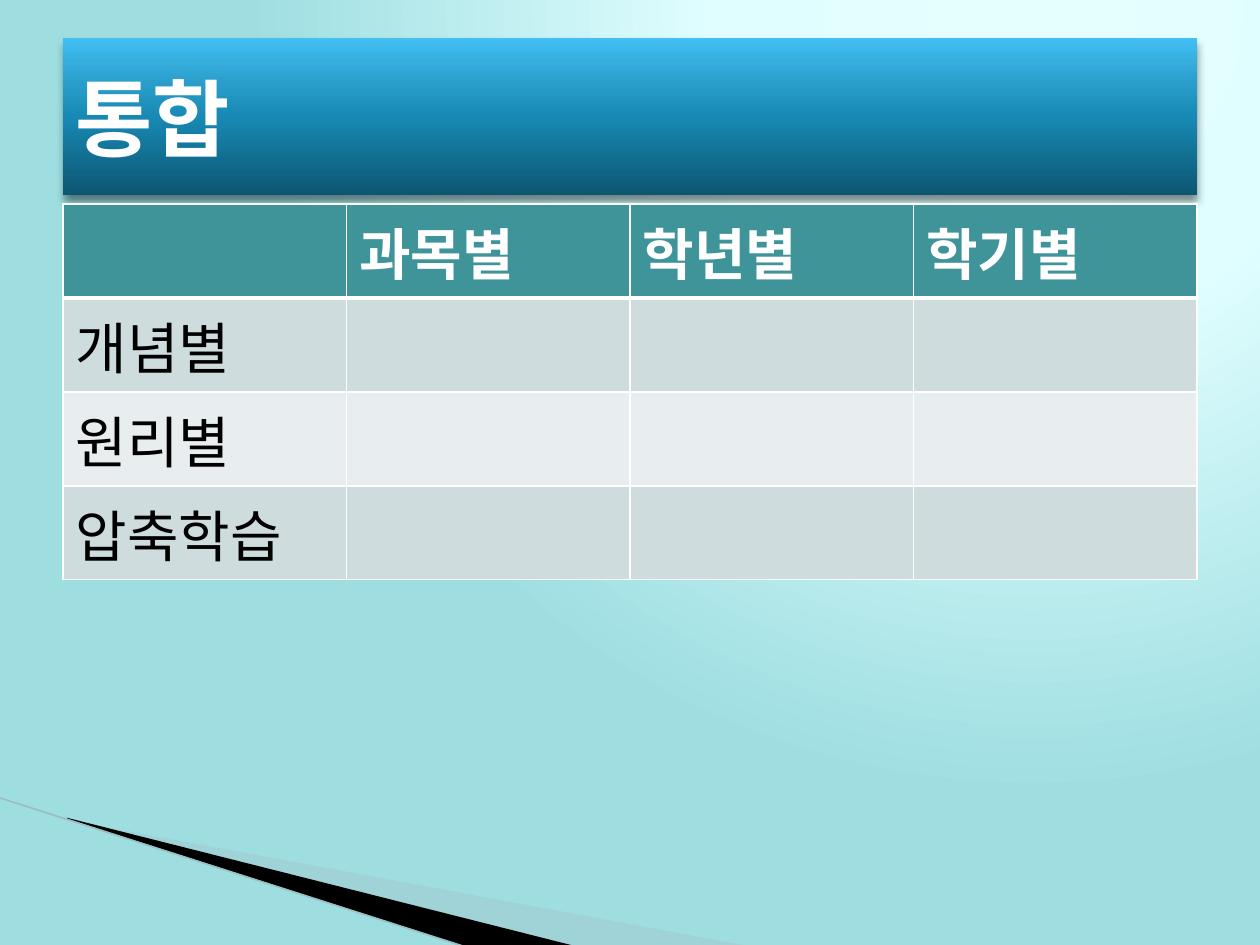
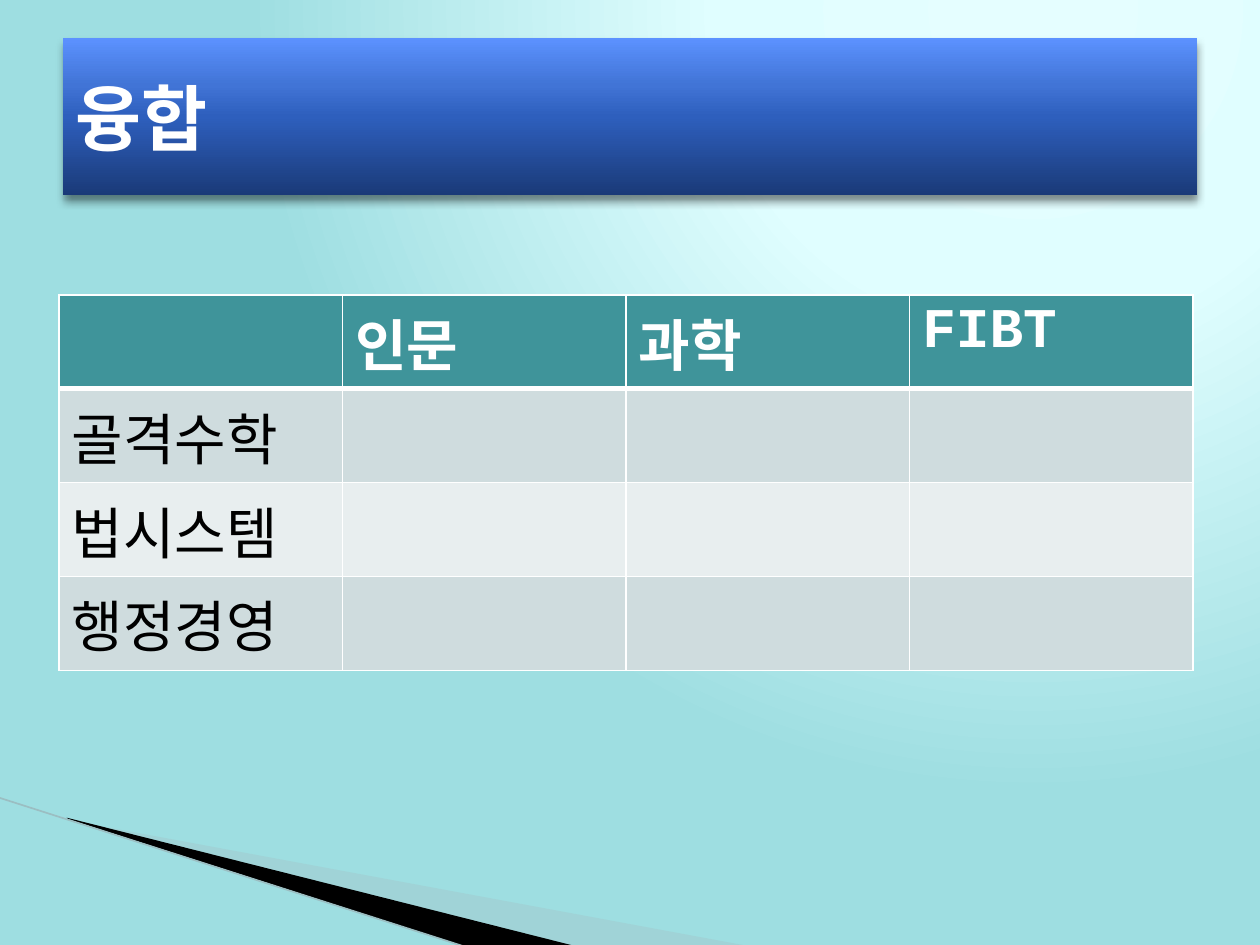
from dataclasses import dataclass

from lxml import etree
from pptx import Presentation
from pptx.dml.color import RGBColor
from pptx.enum import lang, shapes, text
from pptx.oxml import ns
from pptx.util import Pt

FONT = "Courier New"
COLORS = {
    "white": "FFFFFF",
    "black": "000000",
    "header": "3F949A",
    "band_dark": "CFDCDE",
    "band_light": "E8EEEF",
    "wedge": "A4C4C8",
    "thin_line": "9BBEC2",
}
BACKGROUND_STOPS = {0: "E5FEFF", 40: "E0FEFF", 100: "9EDEE1"}
CYAN_STOPS = {0: "0C5672", 50: "1889B4", 70: "299DCA", 100: "42BFF3"}
BLUE_STOPS = {0: "1A3A78", 50: "2E5FBD", 70: "4174D6", 100: "5C92FF"}
UPWARD = '<a:lin ang="16200000" scaled="0"/>'
TOP_RIGHT_GLOW = '<a:path path="circle"><a:fillToRect l="65000" t="0" r="0" b="98000"/></a:path>'

COLUMN_WIDTH = 162
ROW_HEIGHT = 53.5


@dataclass
class GridPage:
    title: str
    title_size: float
    title_stops: dict[int, str]
    table_left: float
    table_top: float
    rows: list[list[str]]


PAGES = [
    GridPage("통합", 48, CYAN_STOPS, 36, 116.64,
             [["", "과목별", "학년별", "학기별"], ["개념별"], ["원리별"], ["압축학습"]]),
    GridPage("융합", 41, BLUE_STOPS, 33.84, 168.48,
             [["", "인문", "과학", "FIBT"], ["골격수학"], ["법시스템"], ["행정경영"]]),
]


def rgb(name: str) -> RGBColor:
    return RGBColor.from_string(COLORS[name])


def element(markup: str):
    """Parse one DrawingML element, declaring the a: prefix on its tag."""
    tag, rest = markup.split(" ", 1)
    return etree.fromstring(f"{tag} {ns.nsdecls('a')} {rest}")


def set_gradient(fill, holder, stops: dict[int, str], direction: str) -> None:
    """Replace the fill inside holder by a gradient with any number of stops."""
    fill.solid()
    stop_list = "".join(
        f'<a:gs pos="{position * 1000}"><a:srgbClr val="{color}"/></a:gs>'
        for position, color in stops.items())
    gradient = element(
        f'<a:gradFill rotWithShape="1"><a:gsLst>{stop_list}</a:gsLst>{direction}</a:gradFill>')
    solid = holder.find(ns.qn("a:solidFill"))
    holder.replace(solid, gradient)


def write(frame, words: str, *, size: float, color: str, bold: bool) -> None:
    para = frame.paragraphs[0]
    para.alignment = text.PP_ALIGN.LEFT
    span = para.add_run()
    span.text = words
    span.font.name = FONT
    span.font.size = Pt(size)
    span.font.bold = bold
    span.font.color.rgb = rgb(color)
    span.font.language_id = lang.MSO_LANGUAGE_ID.KOREAN


def add_wedge(page, points: list[tuple[float, float]], color: str):
    corners = [(Pt(x), Pt(y)) for x, y in points]
    builder = page.shapes.build_freeform(*corners[0], scale=1.0)
    builder.add_line_segments(corners[1:], close=True)
    wedge = builder.convert_to_shape()
    wedge.shadow.inherit = False
    wedge.fill.solid()
    wedge.fill.fore_color.rgb = rgb(color)
    wedge.line.fill.background()
    return wedge


def decorate_layout(layout, page) -> None:
    """Give the layout its background and corner wedges, drawn first on page."""
    fill = layout.background.fill
    holder = layout.element.find(".//" + ns.qn("p:bgPr"))
    set_gradient(fill, holder, BACKGROUND_STOPS, TOP_RIGHT_GLOW)

    pale = add_wedge(
        page, [(39.6, 468.72), (428.4, 540.72), (328.32, 540.72), (39.6, 468)], "wedge")
    pale_color = pale.element.spPr.find(".//" + ns.qn("a:srgbClr"))
    pale_color.append(element('<a:alpha val="40000"/>'))
    dark = add_wedge(
        page, [(38.16, 467.28), (329.04, 540.72), (267.84, 541.44), (38.88, 468)], "black")
    thin = page.shapes.add_connector(
        shapes.MSO_CONNECTOR.STRAIGHT, Pt(-0.72), Pt(455.76), Pt(267.12), Pt(541.44))
    thin.line.color.rgb = rgb("thin_line")
    thin.line.width = Pt(0.95)
    thin.element.spPr.append(element("<a:effectLst />"))

    tree = layout.shapes.element
    for index, shape in enumerate((pale, dark, thin), start=2):
        tree.insert(index, shape.element)


def format_title(page, spec_page: GridPage) -> None:
    title = page.shapes.title
    title.left, title.top, title.width, title.height = Pt(36), Pt(21.6), Pt(648), Pt(90)
    properties = title.element.spPr
    set_gradient(title.fill, properties, spec_page.title_stops, UPWARD)
    properties.append(element(
        '<a:effectLst ><a:outerShdw blurRad="63500" dist="38100" dir="5400000" rotWithShape="0">'
        f'<a:srgbClr val="{COLORS["black"]}"><a:alpha val="45000"/></a:srgbClr>'
        '</a:outerShdw></a:effectLst>'))
    frame = title.text_frame
    frame.auto_size = text.MSO_AUTO_SIZE.NONE
    frame.vertical_anchor = text.MSO_ANCHOR.MIDDLE
    write(frame, spec_page.title, size=spec_page.title_size, color="white", bold=True)


def set_borders(cell, top: float, bottom: float) -> None:
    properties = cell._tc.get_or_add_tcPr()
    widths = {"lnL": 1, "lnR": 1, "lnT": top, "lnB": bottom}
    for index, (side, width) in enumerate(widths.items()):
        properties.insert(index, element(
            f'<a:{side} w="{Pt(width)}"><a:solidFill><a:srgbClr val="{COLORS["white"]}"/>'
            f'</a:solidFill></a:{side}>'))


def add_grid(page, grid: GridPage) -> None:
    row_count, column_count = len(grid.rows), len(grid.rows[0])
    table = page.shapes.add_table(
        row_count, column_count, Pt(grid.table_left), Pt(grid.table_top),
        Pt(COLUMN_WIDTH * column_count), Pt(ROW_HEIGHT * row_count)).table
    for row, words in enumerate(grid.rows):
        is_header = row == 0
        band = "header" if is_header else ("band_dark" if row % 2 else "band_light")
        for column in range(column_count):
            cell = table.cell(row, column)
            cell.fill.solid()
            cell.fill.fore_color.rgb = rgb(band)
            set_borders(cell, top=3 if row == 1 else 1, bottom=3 if is_header else 1)
            if column < len(words) and words[column]:
                write(cell.text_frame, words[column], size=32,
                      color="white" if is_header else "black", bold=is_header)


def main() -> None:
    deck = Presentation()
    deck.slide_width, deck.slide_height = Pt(720), Pt(540)
    layout = deck.slide_layouts.get_by_name("Title Only")
    for number, grid in enumerate(PAGES):
        page = deck.slides.add_slide(layout)
        if number == 0:
            decorate_layout(layout, page)
        format_title(page, grid)
        add_grid(page, grid)
    deck.save("out.pptx")


if __name__ == "__main__":
    main()
